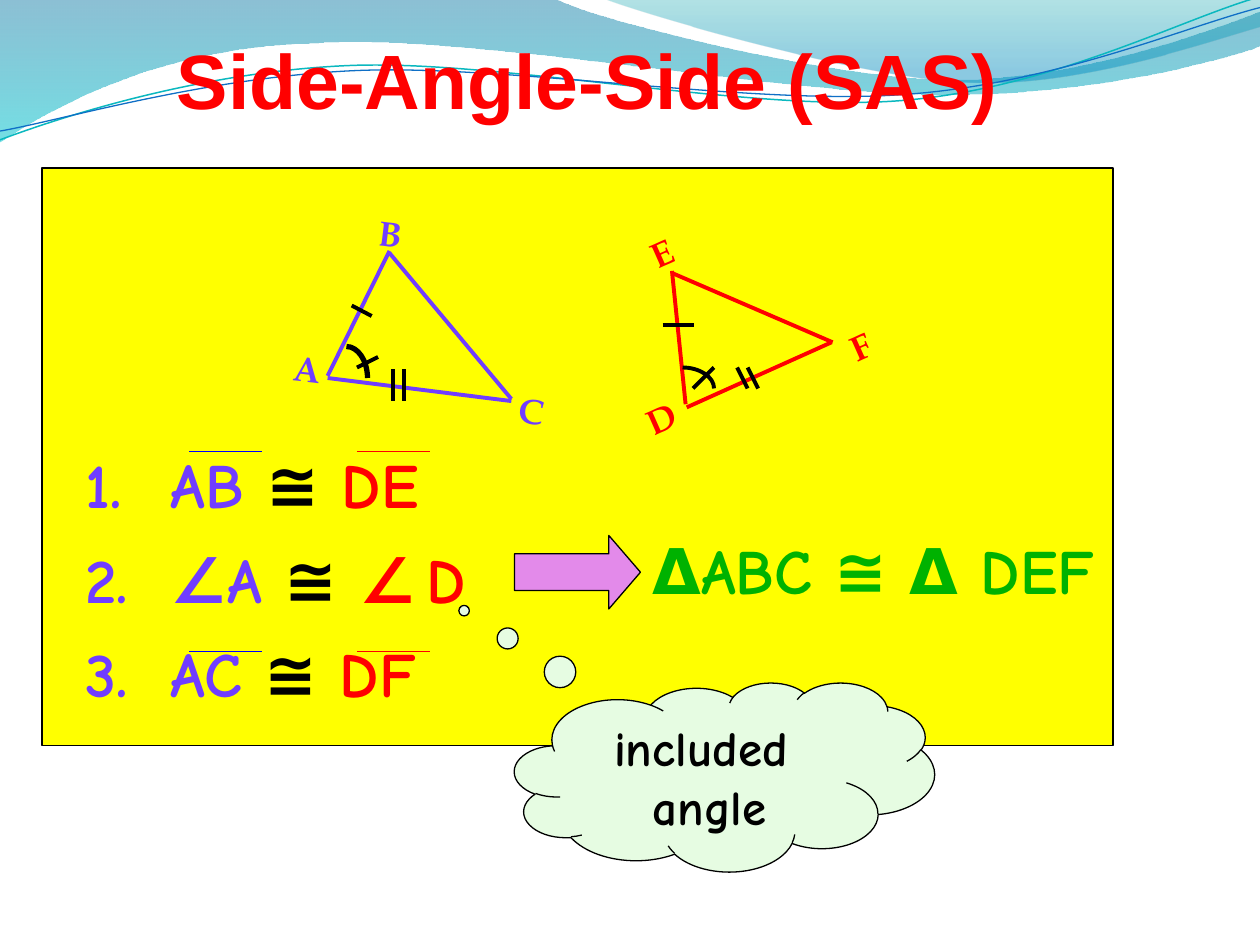
"""Build a geometry slide on the side-angle-side congruence rule."""
from math import cos, radians, sin
from lxml import etree
from pptx import Presentation
from pptx.dml.color import RGBColor
from pptx.enum.shapes import MSO_CONNECTOR, MSO_SHAPE
from pptx.enum.text import MSO_ANCHOR, MSO_AUTO_SIZE, PP_ALIGN
from pptx.oxml.ns import qn
from pptx.util import Inches, Pt

STRAIGHT = MSO_CONNECTOR.STRAIGHT
RECTANGLE, ARROW, CLOUD = MSO_SHAPE.RECTANGLE, MSO_SHAPE.RIGHT_ARROW, MSO_SHAPE.CLOUD_CALLOUT
TOP, MIDDLE = MSO_ANCHOR.TOP, MSO_ANCHOR.MIDDLE
LEFT, CENTER = PP_ALIGN.LEFT, PP_ALIGN.CENTER
NO_AUTOFIT = MSO_AUTO_SIZE.NONE

COLOURS = {
    "black": "000000", "red": "FF0000", "violet": "703DFF", "blue": "0000FF",
    "green": "00B200", "yellow": "FFFF00", "pink": "E38AEA", "mint": "E6FCE2",
    "deep": "0074A1", "aqua": "00C6CF", "teal": "00A1A9", "sky": "008BBF",
    "cyan line": "0AB8BF", "blue line": "0F6FC6",
}
HEADING, HAND, SERIF = "Arial", "Comic Neue", "TeX Gyre Pagella"
COLUMNS, ROWS = 120, 90
CELL = Inches(10) / COLUMNS
PERCENT = Inches(10) / 100
TILT = 2.7

LEFT_WAVE = [(0, 0), (44, -0.1), (47.6, 1.7), (66.4, 6.3), (75.8, 6.3),
             (85.3, 6.3), (95.8, 2.6), (100, 0.9),
             (100.1, 3.6), (98.3, 4.4), (87, 7.6), (74.6, 7.5),
             (62.2, 7.5), (38.2, 2.8), (25.7, 3.4), (12.9, 3.6), (4.6, 8.3), (-0.1, 11.3)]
RIGHT_WAVE = [(47.9, -0.1), (50.9, 1.1), (68.2, 6.2), (76.9, 6.5),
              (85.6, 6.9), (96.1, 3.2), (100, 2.1), (100, 0)]
CYAN_CURVE = [(0, 11.1), (4.8, 9.3), (15.8, 5.7), (27.7, 5.2), (39.5, 4.7),
              (59.3, 8.9), (71.3, 8), (83.3, 7.1), (93.8, 1.5), (99.8, -0.2)]
BLUE_CURVE = [(0, 10.4), (4.7, 9.6), (16.4, 6.1), (28.3, 5.6), (40.3, 5.1),
              (59.7, 8.4), (71.7, 7.5), (83.6, 6.7), (94.1, 2.1), (100, 0.6)]
ANGLE_A = [(27.5, 27.5), (28.4, 27.5), (29.17, 28.6), (29.17, 30)]
ANGLE_D = [(54.17, 29.17), (55.5, 29.17), (56.67, 29.9), (56.67, 30.83)]


def grid(*cells):
    """Turn counts of grid cells into lengths."""
    return [round(cell * CELL) for cell in cells]


def colour(name):
    """Look up a named colour."""
    return RGBColor.from_string(COLOURS[name])


def add_path(slide, points, kinds, close=False):
    """Draw lines (L) and cubic curves (C) through percent-of-width points."""
    start, *rest = [(round(x * PERCENT), round(y * PERCENT)) for x, y in points]
    builder = slide.shapes.build_freeform(*start)
    builder.add_line_segments(rest, close=close)
    shape = builder.convert_to_shape()
    shape.shadow.inherit = False
    segments = iter(list(shape.element.iter(qn("a:lnTo"))))
    for kind in kinds:
        segment = next(segments)
        if kind == "C":
            segment.tag = qn("a:cubicBezTo")
            for _ in range(2):
                control = next(segments)
                control.getparent().remove(control)
                segment.append(control[0])
    return shape


def add_wave(slide, points, kinds, stops):
    """Draw a filled wave with a see-through vertical gradient."""
    shape = add_path(slide, points, kinds, True)
    shape.line.fill.background()
    shape.fill.gradient()
    shape.fill.gradient_angle = 270
    for stop, (position, name, _) in zip(shape.fill.gradient_stops, stops):
        stop.position = position
        stop.color.rgb = colour(name)
    for node, (_, _, opacity) in zip(shape.element.iter(qn("a:srgbClr")), stops):
        etree.SubElement(node, qn("a:alpha"), val=str(opacity * 1000))


def add_curve(slide, points, name, width):
    """Draw an open curve."""
    shape = add_path(slide, points, "C" * (len(points) // 3))
    shape.fill.background()
    shape.line.color.rgb = colour(name)
    shape.line.width = Pt(width)
    return shape


def add_tilted_curve(slide, points, middle, name, width):
    """Draw a curve level about its middle, then turn the shape back."""
    across, down = sin(radians(TILT)), cos(radians(TILT))
    moved = [(x - middle[0], y - middle[1]) for x, y in points]
    level = [(middle[0] + x * down - y * across, middle[1] + x * across + y * down)
             for x, y in moved]
    add_curve(slide, level, name, width).rotation = 360 - TILT


def add_line(slide, start, end, name="black", width=2.25):
    """Draw a straight line between two grid points."""
    line = slide.shapes.add_connector(STRAIGHT, *grid(*start, *end))
    line.line.color.rgb = colour(name)
    line.line.width = Pt(width)
    etree.SubElement(line.element.spPr, qn("a:effectLst"))


def add_figure(slide, kind, box, fill, adjustments=()):
    """Draw a filled preset shape with a black outline."""
    shape = slide.shapes.add_shape(kind, *grid(*box))
    shape.shadow.inherit = False
    shape.fill.solid()
    shape.fill.fore_color.rgb = colour(fill)
    shape.line.color.rgb = colour("black")
    shape.line.width = Pt(0.75)
    for index, value in enumerate(adjustments):
        shape.adjustments[index] = value
    return shape


def place(placeholder, box):
    """Move a placeholder to a grid box, in front of what is drawn."""
    placeholder.left, placeholder.top, placeholder.width, placeholder.height = grid(*box)
    placeholder.element.getparent().append(placeholder.element)
    return placeholder


def write(shape, paragraphs, size, font=HAND, align=LEFT, anchor=TOP, wrap=True,
          before=0, numbered=False):
    """Fill a shape with paragraphs made of (text, colour[, plain size]) runs."""
    frame = shape.text_frame
    frame.word_wrap = wrap
    frame.auto_size = NO_AUTOFIT
    frame.vertical_anchor = anchor
    for index, runs in enumerate(paragraphs):
        paragraph = frame.add_paragraph() if index else frame.paragraphs[0]
        paragraph.alignment = align
        properties = paragraph._p.get_or_add_pPr()
        if before:
            properties.set("marL", str(Inches(0.5)))
            properties.set("indent", str(-Inches(0.5)))
            spacing = etree.SubElement(properties, qn("a:spcBef"))
            etree.SubElement(spacing, qn("a:spcPct"), val=str(before * 1000))
        if numbered:
            etree.SubElement(properties, qn("a:buFontTx"))
            etree.SubElement(properties, qn("a:buAutoNum"), type="arabicPeriod")
        for text, name, *plain_size in runs:
            run = paragraph.add_run()
            run.text = text
            run.font.name = font
            run.font.size = Pt(plain_size[0] if plain_size else size)
            run.font.bold = not plain_size
            run.font.color.rgb = colour(name)


def add_triangle(slide, sides, labels, name, rotation):
    """Draw a triangle and its tilted corner letters."""
    for start, end in sides:
        add_line(slide, start, end, name)
    for letter, box in labels.items():
        label = slide.shapes.add_textbox(*grid(*box, 4))
        frame = label.text_frame
        frame.margin_left = frame.margin_top = frame.margin_right = frame.margin_bottom = 0
        label.rotation = rotation
        write(label, [[(letter, name)]], 20, SERIF, wrap=False)


def add_triangles(slide):
    """Draw both triangles with their side and angle marks."""
    add_triangle(slide, [((31.2, 35.8), (37.1, 23.9)), ((31.2, 36), (48.7, 38.2)),
                         ((37.1, 24.1), (48.7, 38))],
                 {"B": (36.1, 20.2, 2.3), "A": (28, 33.1, 2.4), "C": (49.4, 37.1, 2.4)},
                 "violet", 7)
    add_triangle(slide, [((65.3, 38.5), (64, 25.8)), ((65.4, 38.8), (79.2, 32.6)),
                         ((64, 26), (79.3, 32.6))],
                 {"E": (62, 22, 2.3), "D": (61.6, 37.9, 2.4), "F": (81, 30.9, 2)}, "red", 336)
    add_line(slide, (33.5, 29.1), (35.4, 30.1))
    add_line(slide, (63.1, 30.96), (66.1, 30.96))
    for shift in (0, 1):
        add_line(slide, (37.45 + shift, 35.15), (37.45 + shift, 38.15))
        add_line(slide, (70.2 + shift, 35), (71.2 + shift, 37))
    add_curve(slide, ANGLE_A, "black", 3)
    add_line(slide, (36, 34), (34, 35))
    add_curve(slide, ANGLE_D, "black", 2.25)
    add_line(slide, (66, 37), (68, 35))


def main():
    """Assemble and save the slide."""
    presentation = Presentation()
    presentation.slide_width, presentation.slide_height = grid(COLUMNS, ROWS)
    slide = presentation.slides.add_slide(presentation.slide_layouts[1])
    title, body = slide.placeholders
    add_wave(slide, LEFT_WAVE, "LCCLCCC", [(0, "deep", 45), (1, "aqua", 55)])
    add_wave(slide, RIGHT_WAVE, "CCL", [(0, "teal", 30), (0.8, "sky", 45)])
    add_tilted_curve(slide, CYAN_CURVE, (49.9, 5.75), "cyan line", 0.85)
    add_tilted_curve(slide, BLUE_CURVE, (49.95, 5.9), "blue line", 0.75)
    write(place(title, (-4, 0, 120, 15)), [[("Side-Angle-Side (SAS)", "red")]], 44,
          HEADING, CENTER, MIDDLE)
    add_figure(slide, RECTANGLE, (4, 16, 102, 55), "yellow")
    congruent = ("≅ ", "black")
    write(place(body, (6.95, 41.85, 42, 27.1)), [
        [(" AB ", "violet"), congruent, ("DE", "red")],
        [(" ∠A ", "violet"), congruent, ("∠", "red"), (" ", "black", 18), ("D", "red")],
        [(" AC ", "violet"), congruent, ("DF", "red")],
    ], 36, before=30, numbered=True)
    add_figure(slide, ARROW, (49, 51, 12, 7), "pink", (0.5, 0.43))
    conclusion = slide.shapes.add_textbox(*grid(60.95, 50, 45, 8.4))
    write(conclusion, [[("ΔABC ≅ Δ DEF", "green")]], 36, before=50)
    add_triangles(slide)
    cloud = add_figure(slide, CLOUD, (49, 65, 40, 18), "mint", (-0.62, -0.88))
    write(cloud, [[("included ", "black")], [("angle", "black")]], 28, align=CENTER)
    for left, name in ((18, "blue"), (34, "red")):
        for top in (43, 62.04):
            add_line(slide, (left, top), (left + 7, top), name, 0.75)
    presentation.save("out.pptx")


if __name__ == "__main__":
    main()
